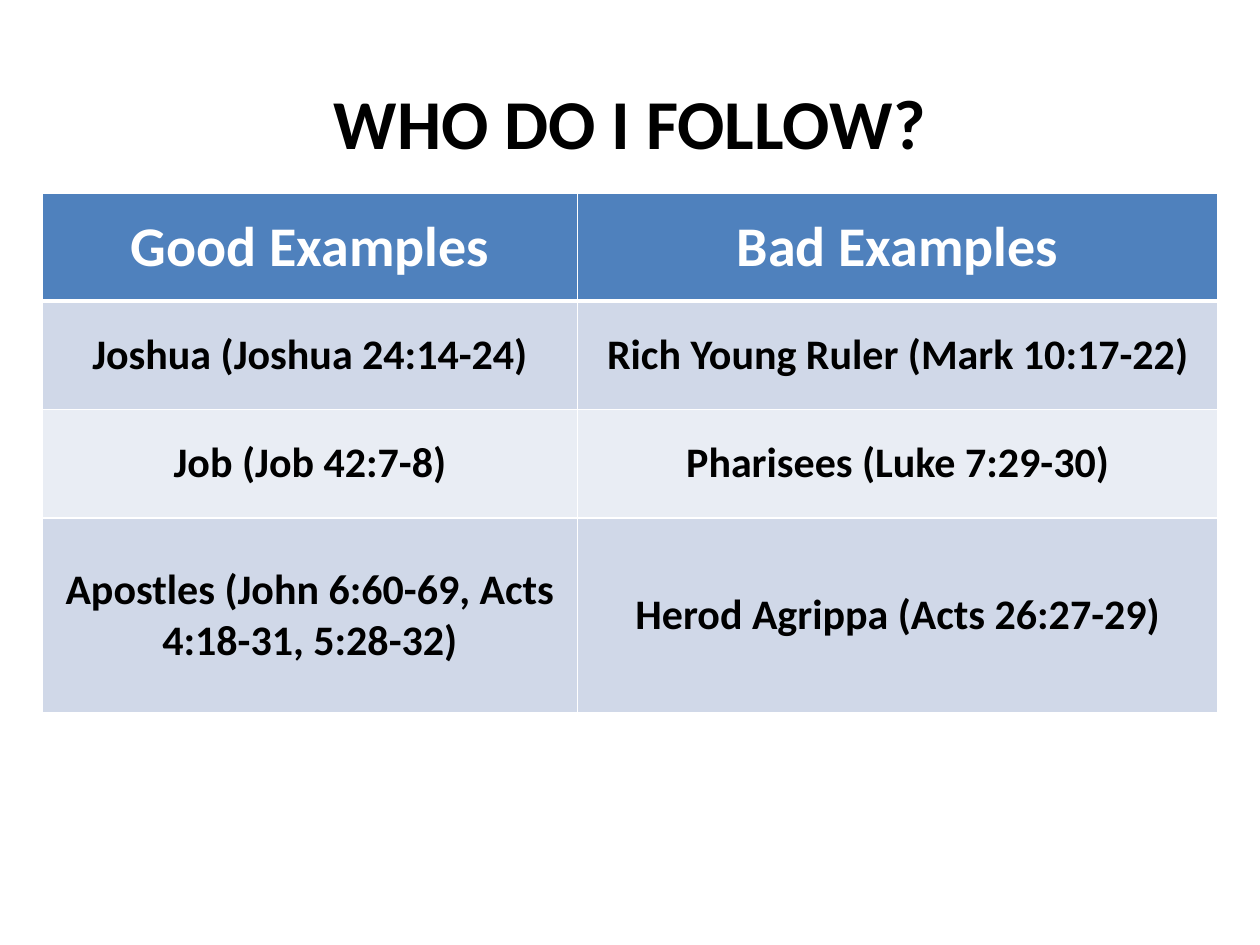
from typing import NamedTuple

from lxml import etree
from pptx import Presentation
from pptx.dml.color import RGBColor
from pptx.enum.text import MSO_ANCHOR, PP_ALIGN
from pptx.oxml.ns import qn
from pptx.util import Inches, Pt

CENTER = PP_ALIGN.CENTER
MIDDLE = MSO_ANCHOR.MIDDLE

BLACK = RGBColor(0x00, 0x00, 0x00)
WHITE = RGBColor(0xFF, 0xFF, 0xFF)
HEADER_BLUE = RGBColor(0x4F, 0x81, 0xBD)
BAND_DARK = RGBColor(0xD0, 0xD8, 0xE8)
BAND_LIGHT = RGBColor(0xE9, 0xED, 0xF4)

FONT = "Calibri"
SLIDE_WIDTH, SLIDE_HEIGHT = Inches(10), Inches(7.5)
COLUMN_WIDTHS = (4.25, 5.08)
ROW_HEIGHTS = (0.86, 0.86, 0.86, 1.55)
TABLE_TOP = 1.53
THIN, THICK = 1, 3


class Examples(NamedTuple):
    good: str
    bad: str


class RowStyle(NamedTuple):
    size: int
    color: RGBColor
    fill: RGBColor
    top: int
    bottom: int


ROWS = (
    Examples("Good Examples", "Bad Examples"),
    Examples("Joshua (Joshua 24:14-24)", "Rich Young Ruler (Mark 10:17-22)"),
    Examples("Job (Job 42:7-8)", "Pharisees (Luke 7:29-30)"),
    Examples("Apostles (John 6:60-69, Acts 4:18-31, 5:28-32)",
             "Herod Agrippa (Acts 26:27-29)"),
)


def style_for(row: int) -> RowStyle:
    """Header first, then alternating bands below a thick rule."""
    if row == 0:
        return RowStyle(32, WHITE, HEADER_BLUE, THIN, THICK)
    band = BAND_DARK if row % 2 else BAND_LIGHT
    return RowStyle(24, BLACK, band, THICK if row == 1 else THIN, THIN)


def write(frame, text: str, size: int, color: RGBColor) -> None:
    frame.text = text
    frame.vertical_anchor = MIDDLE
    paragraph = frame.paragraphs[0]
    paragraph.alignment = CENTER
    font = paragraph.runs[0].font
    font.name, font.size, font.bold = FONT, Pt(size), True
    font.color.rgb = color


def add_borders(cell, top: int, bottom: int) -> None:
    properties = cell._tc.get_or_add_tcPr()
    widths = {"a:lnL": THIN, "a:lnR": THIN, "a:lnT": top, "a:lnB": bottom}
    for side, width in widths.items():
        line = etree.SubElement(properties, qn(side), w=str(Pt(width)))
        fill = etree.SubElement(line, qn("a:solidFill"))
        etree.SubElement(fill, qn("a:srgbClr"), val=str(WHITE))


def fill_cell(cell, text: str, style: RowStyle) -> None:
    write(cell.text_frame, text, style.size, style.color)
    cell.vertical_anchor = MIDDLE
    add_borders(cell, style.top, style.bottom)
    cell.fill.solid()
    cell.fill.fore_color.rgb = style.fill


def add_examples_table(slide) -> None:
    width, height = Inches(sum(COLUMN_WIDTHS)), Inches(sum(ROW_HEIGHTS))
    left = (SLIDE_WIDTH - width) // 2
    table = slide.shapes.add_table(
        len(ROWS), len(COLUMN_WIDTHS), left, Inches(TABLE_TOP), width, height).table
    for column, column_width in zip(table.columns, COLUMN_WIDTHS):
        column.width = Inches(column_width)
    for index, examples in enumerate(ROWS):
        table.rows[index].height = Inches(ROW_HEIGHTS[index])
        for cell, text in zip(table.rows[index].cells, examples):
            fill_cell(cell, text, style_for(index))


def main() -> None:
    presentation = Presentation()
    presentation.slide_width, presentation.slide_height = SLIDE_WIDTH, SLIDE_HEIGHT
    slide = presentation.slides.add_slide(presentation.slide_layouts[5])

    # Title across the full width
    title = slide.shapes.title
    title.left, title.top = 0, Inches(0.58)
    title.width, title.height = SLIDE_WIDTH, Inches(0.77)
    write(title.text_frame, "WHO DO I FOLLOW?", 40, BLACK)

    # Good and bad examples side by side
    add_examples_table(slide)
    presentation.save("out.pptx")


if __name__ == "__main__":
    main()
